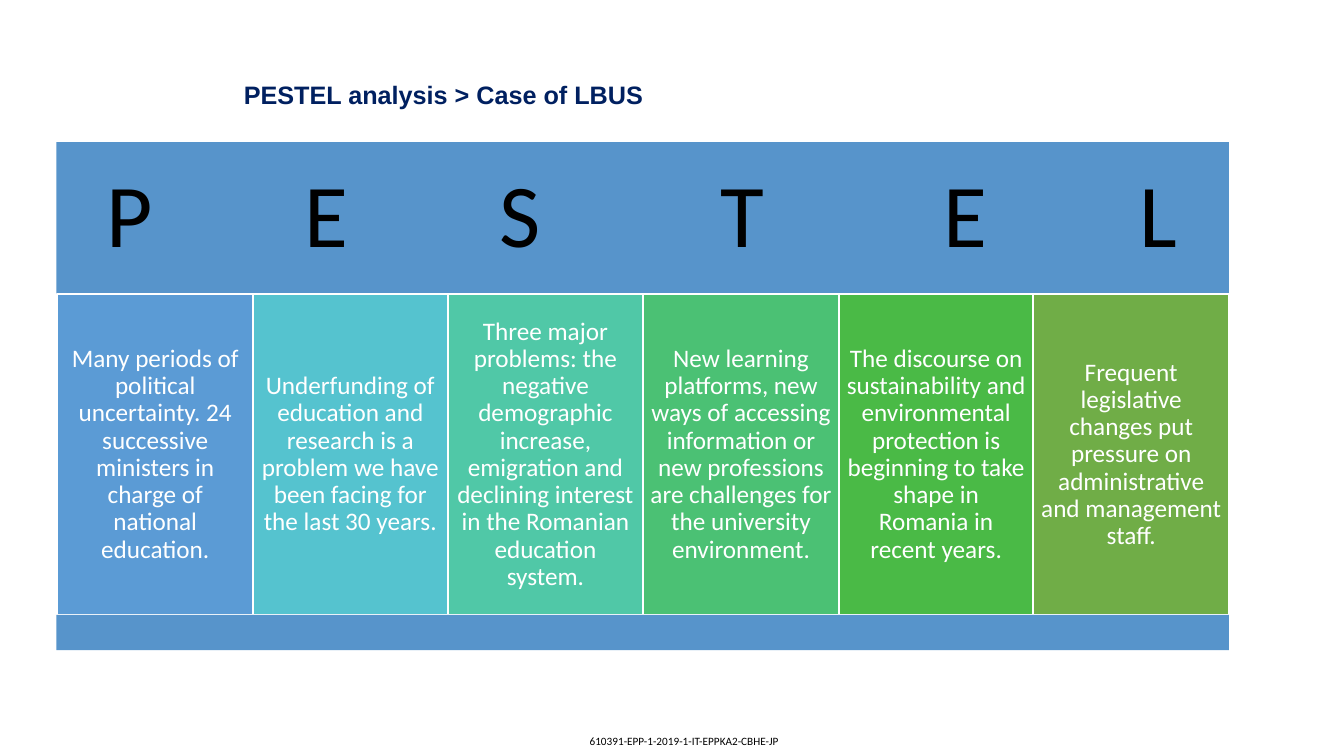
"""Build the PESTEL analysis slide: a banner, six factor columns and a base bar."""
from dataclasses import dataclass

from lxml import etree
from pptx import Presentation
from pptx import util as u
from pptx.dml.color import RGBColor
from pptx.enum import shapes, text
from pptx.oxml.ns import qn

PX = 9144
BLACK = RGBColor(0x00, 0x00, 0x00)
WHITE = RGBColor(0xFF, 0xFF, 0xFF)
NAVY = RGBColor(0x00, 0x20, 0x60)
BAND = RGBColor(0x57, 0x94, 0xCB)
BLUE = RGBColor(0x5B, 0x9B, 0xD5)
CYAN = RGBColor(0x55, 0xC3, 0xCF)
TEAL = RGBColor(0x50, 0xC8, 0xA7)
MINT = RGBColor(0x4B, 0xC1, 0x74)
GREEN = RGBColor(0x4A, 0xBA, 0x46)
OLIVE = RGBColor(0x70, 0xAD, 0x47)

BAND_LEFT, BAND_WIDTH = 56, 1163
COLUMNS_LEFT, COLUMNS_WIDTH = 57, 1162
COLUMNS_TOP, COLUMNS_HEIGHT = 292, 318
BANNER_INSET, COLUMN_INSET = 27, 7


@dataclass(frozen=True)
class Factor:
    """One PESTEL factor: its letter, the letter's centre, its fill and its finding."""
    letter: str
    centre: int
    fill: RGBColor
    finding: str


@dataclass(frozen=True)
class Box:
    """A rectangle in px."""
    left: int
    top: int
    width: int
    height: int

    def emu(self) -> list[int]:
        """Return the rectangle's measures in EMU."""
        return [v * PX for v in (self.left, self.top, self.width, self.height)]


FACTORS = [
    Factor("P", 129, BLUE, "Many periods of political uncertainty. 24 successive "
           "ministers in charge of national education."),
    Factor("E", 324, CYAN, "Underfunding of education and research is a problem "
           "we have been facing for the last 30 years."),
    Factor("S", 516, TEAL, "Three major problems: the negative demographic increase, "
           "emigration and declining interest in the Romanian education system."),
    Factor("T", 736, MINT, "New learning platforms, new ways of accessing information "
           "or new professions are challenges for the university environment."),
    Factor("E", 958, GREEN, "The discourse on sustainability and environmental "
           "protection is beginning to take shape in Romania in recent years."),
    Factor("L", 1149, OLIVE, "Frequent legislative changes put pressure on "
           "administrative and management staff."),
]


def set_all(target: object, values: dict) -> None:
    """Set each named attribute of the target."""
    for name, value in values.items():
        setattr(target, name, value)


def write(sp, words: str, size: int, color: RGBColor, font: str = "Calibri",
          bold: bool = False, **paragraph):
    """Write one formatted paragraph into a shape and return it."""
    p = sp.text_frame.paragraphs[0]
    set_all(p, paragraph)
    r = p.add_run()
    r.text = words
    set_all(r.font, {"name": font, "size": u.Pt(size), "bold": bold})
    r.font.color.rgb = color
    return p


def add_rect(s, box: Box, fill: RGBColor, inset: int = 0, outlined: bool = False):
    """Add a flat rectangle with middle-anchored text."""
    sp = s.shapes.add_shape(shapes.MSO_SHAPE.RECTANGLE, *box.emu())
    sp.shadow.inherit = False
    sp.fill.solid()
    sp.fill.fore_color.rgb = fill
    if outlined:
        sp.line.color.rgb = WHITE
        sp.line.width = u.Pt(1.5)
    else:
        sp.line.fill.background()
    set_all(sp.text_frame, {
        "word_wrap": True, "vertical_anchor": text.MSO_ANCHOR.MIDDLE,
        **{f"margin_{side}": inset * PX for side in ("left", "top", "right", "bottom")},
    })
    return sp


def add_label(s, box: Box, wrap: bool):
    """Add an empty text box."""
    sp = s.shapes.add_textbox(*box.emu())
    sp.text_frame.word_wrap = wrap
    return sp


def add_banner(s) -> None:
    """Add the top band with its letters on centred tab stops."""
    sp = add_rect(s, Box(BAND_LEFT, 141, BAND_WIDTH, 151), BAND, BANNER_INSET)
    p = sp.text_frame.paragraphs[0]
    tabs = etree.SubElement(p._p.get_or_add_pPr(), qn("a:tabLst"))
    for factor in FACTORS:
        pos = (factor.centre - BAND_LEFT - BANNER_INSET) * PX
        etree.SubElement(tabs, qn("a:tab"), pos=str(pos), algn="ctr")
    write(sp, "".join(f"\t{factor.letter}" for factor in FACTORS), 64, BLACK,
          alignment=text.PP_ALIGN.LEFT, line_spacing=0.9)


def add_column(s, index: int, factor: Factor) -> None:
    """Add one factor's column."""
    left, right = (COLUMNS_LEFT + round(COLUMNS_WIDTH * i / len(FACTORS))
                   for i in (index, index + 1))
    box = Box(left, COLUMNS_TOP, right - left, COLUMNS_HEIGHT)
    sp = add_rect(s, box, factor.fill, COLUMN_INSET, outlined=True)
    write(sp, factor.finding, 18, WHITE,
          alignment=text.PP_ALIGN.CENTER, line_spacing=0.9)


def main() -> None:
    """Build and save the slide."""
    prs = Presentation()
    set_all(prs, {"slide_width": 1333 * PX, "slide_height": 750 * PX})
    s = prs.slides.add_slide(prs.slide_layouts[6])

    footer = add_label(s, Box(575, 724, 210, 26), wrap=False)
    write(footer, "610391-EPP-1-2019-1-IT-EPPKA2-CBHE-JP", 8, BLACK)

    add_banner(s)
    for index, factor in enumerate(FACTORS):
        add_column(s, index, factor)
    add_rect(s, Box(BAND_LEFT, COLUMNS_TOP + COLUMNS_HEIGHT, BAND_WIDTH, 35), BAND)

    title = add_label(s, Box(207, 74, 764, 40), wrap=True)
    p = write(title, "PESTEL analysis > Case of LBUS", 18, NAVY, "Arial", True)
    for name, px in {"marL": 50, "indent": -25}.items():
        p._p.get_or_add_pPr().set(name, str(px * PX))

    prs.save("out.pptx")


if __name__ == "__main__":
    main()
